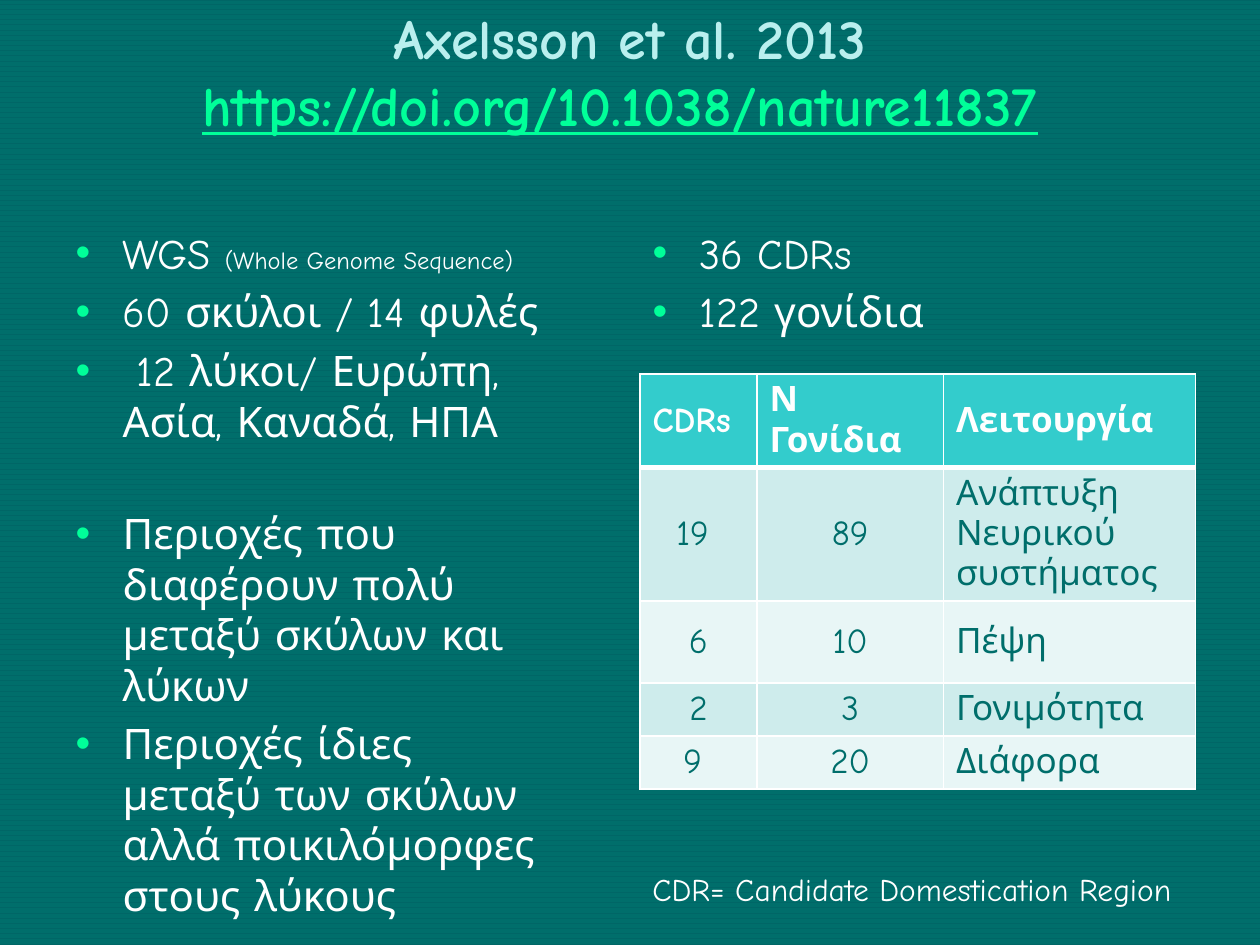
from lxml import etree
from pptx import Presentation, util as u
from pptx.dml.color import RGBColor
from pptx.enum import dml, text
from pptx.oxml import ns

WHITE, TEAL, MINT, PALE = "FFFFFF", "006E6B", "00FF99", "B9EFEE"
HEADER, BANDS = "33CCCC", ("CEECEC", "E8F6F6")


def color(value):
    return RGBColor.from_string(value)


def add_element(parent, tag, **attributes):
    return etree.SubElement(parent, ns.qn(tag), attributes)


class SlideBuilder:
    """Hold the style and the current slide, and add each kind of element."""

    font_name = "Comic Neue"
    margin, right_column, column_width = 1.27, 12.9, 11.23

    def __init__(self, presentation):
        self.slide = presentation.slides.add_slide(presentation.slide_layouts[4])
        self.placeholders = {
            shape.placeholder_format.idx: shape for shape in self.slide.placeholders
        }

    def background(self, foreground, back):
        fill = self.slide.background.fill
        fill.patterned()
        fill.pattern = dml.MSO_PATTERN.DARK_HORIZONTAL
        fill.fore_color.rgb = color(foreground)
        fill.back_color.rgb = color(back)

    def run(self, paragraph, words, size, value=WHITE, bold=False, underline=False):
        run = paragraph.add_run()
        run.text = words
        font = run.font
        font.name, font.size = self.font_name, u.Pt(size)
        font.bold, font.underline = bold, underline
        font.color.rgb = color(value)

    def place(self, index, left, top, width, height, anchor):
        shape = self.placeholders.pop(index)
        shape.left, shape.top = u.Cm(left), u.Cm(top)
        shape.width, shape.height = u.Cm(width), u.Cm(height)
        frame = shape.text_frame
        frame.word_wrap = True
        frame.auto_size = text.MSO_AUTO_SIZE.NONE
        frame.vertical_anchor = anchor
        return frame

    def title(self, heading, address):
        frame = self.place(0, self.margin, 0.76, 22.86, 3.18, text.MSO_ANCHOR.MIDDLE)
        paragraph = frame.paragraphs[0]
        paragraph.alignment = text.PP_ALIGN.CENTER
        self.run(paragraph, heading, 32, PALE, bold=True)
        paragraph.add_line_break()
        self.run(paragraph, address, 32, MINT, bold=True, underline=True)
        self.run(paragraph, " ", 32, PALE, bold=True)
        paragraph.add_line_break()

    def bullets(self, index, left, top, width, height, items):
        frame = self.place(index, left, top, width, height, text.MSO_ANCHOR.TOP)
        for number, runs in enumerate(items):
            paragraph = frame.add_paragraph() if number else frame.paragraphs[0]
            paragraph.alignment = text.PP_ALIGN.LEFT
            paragraph.space_before = u.Pt(4.8 if number else 0)
            properties = paragraph._p.get_or_add_pPr()
            properties.set("marL", str(u.Cm(0.95)))
            properties.set("indent", str(-u.Cm(0.95)))
            add_element(add_element(properties, "a:buClr"), "a:srgbClr", val=MINT)
            add_element(properties, "a:buChar", char="•")
            for words, size in runs:
                self.run(paragraph, words, size)

    def cell(self, cell, words, fill, value, centered, bold, bottom):
        properties = cell._tc.get_or_add_tcPr()
        for side, width in (("L", 1), ("R", 1), ("T", 1), ("B", bottom)):
            line = add_element(properties, f"a:ln{side}", w=str(u.Pt(width)))
            add_element(add_element(line, "a:solidFill"), "a:srgbClr", val=WHITE)
        cell.fill.solid()
        cell.fill.fore_color.rgb = color(fill)
        cell.vertical_anchor = text.MSO_ANCHOR.MIDDLE
        paragraph = cell.text_frame.paragraphs[0]
        paragraph.alignment = text.PP_ALIGN.CENTER if centered else text.PP_ALIGN.LEFT
        self.run(paragraph, words, 20, value, bold)

    def table(self, left, top, widths, heights, rows):
        table = self.slide.shapes.add_table(
            len(rows), len(widths), u.Cm(left), u.Cm(top),
            u.Cm(sum(widths)), u.Cm(sum(heights)),
        ).table
        for column, width in zip(table.columns, widths):
            column.width = u.Cm(width)
        for number, (row, height, values) in enumerate(zip(table.rows, heights, rows)):
            row.height = u.Cm(height)
            header = number == 0
            fill = HEADER if header else BANDS[(number - 1) % 2]
            for position, words in enumerate(values):
                self.cell(
                    table.cell(number, position), words, fill,
                    WHITE if header else TEAL,
                    centered=not header and position < 2,
                    bold=header, bottom=3 if header else 1,
                )

    def note(self, left, top, width, height, words):
        box = self.slide.shapes.add_textbox(
            u.Cm(left), u.Cm(top), u.Cm(width), u.Cm(height)
        )
        box.text_frame.word_wrap = False
        box.text_frame.auto_size = text.MSO_AUTO_SIZE.SHAPE_TO_FIT_TEXT
        self.run(box.text_frame.paragraphs[0], words, 18)

    def remove_empty_placeholders(self):
        for shape in self.placeholders.values():
            shape.element.getparent().remove(shape.element)


def main():
    presentation = Presentation()
    presentation.slide_width, presentation.slide_height = u.Cm(25.4), u.Cm(19.05)
    builder = SlideBuilder(presentation)
    left, right, width = builder.margin, builder.right_column, builder.column_width

    builder.background(TEAL, "006666")
    builder.title("Axelsson et al. 2013", "https://doi.org/10.1038/nature11837")
    builder.bullets(1, left, 4.45, width, 5.28, [
        [("WGS ", 24), ("(Whole Genome Sequence)", 14)],
        [("60 σκύλοι / 14 φυλές", 24)],
        [(" 12 λύκοι/ Ευρώπη, Ασία, Καναδά, ΗΠΑ", 24)],
    ])
    builder.bullets(2, right, 4.45, width, 3.3, [
        [("36 CDRs", 24)],
        [("122 γονίδια", 24)],
    ])
    builder.bullets(3, left, 10.11, 9.83, 7.95, [
        [("Περιοχές που διαφέρουν πολύ μεταξύ σκύλων και λύκων", 24)],
        [("Περιοχές ίδιες μεταξύ των σκύλων αλλά ποικιλόμορφες στους λύκους", 24)],
    ])
    builder.table(right, 7.54, (2.36, 3.76, 5.08), (1.04, 1.57, 1.65, 1.04, 1.04), [
        ("CDRs", "Ν Γονίδια", "Λειτουργία"),
        ("19 ", "89", "Ανάπτυξη Νευρικού συστήματος"),
        ("6", "10", "Πέψη"),
        ("2", "3", "Γονιμότητα"),
        ("9 ", "20", "Διάφορα"),
    ])
    builder.note(right, 17.42, 11.84, 1.02, "CDR= Candidate Domestication Region")
    builder.remove_empty_placeholders()
    presentation.save("out.pptx")


if __name__ == "__main__":
    main()
